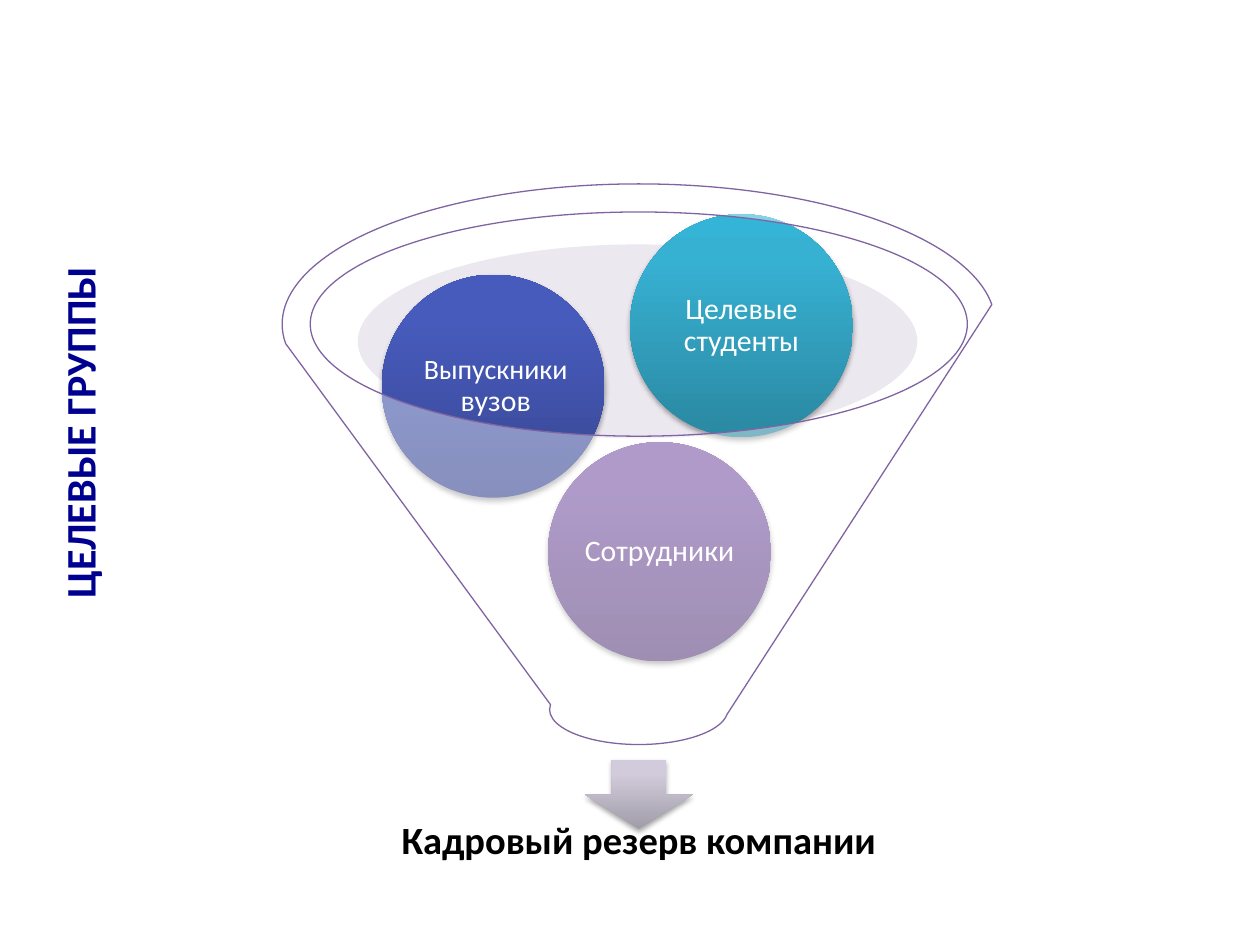
"""Build a funnel slide that leads three target groups to one talent pool."""
from pptx import Presentation
from pptx.dml.color import RGBColor
from pptx.enum.shapes import MSO_SHAPE
from pptx.enum.text import MSO_ANCHOR, MSO_AUTO_SIZE, PP_ALIGN
from pptx.oxml import parse_xml
from pptx.oxml.ns import nsdecls
from pptx.util import Inches, Pt

THEME = {
    "font": "Calibri",
    "mist": "CDC6D7", "veil": "FFFFFF", "rim": "8064A2", "shade": "000000",
    "arrow": ("A19CA8", "D1CBDB", "D2CBDC"),
    "staff": ("5F4480", "7B58A6", "7C57A8"),
    "grads": ("374691", "475BBC", "455ABF"),
    "target": ("2A88A2", "37B1D2", "34B4D6"),
    "ball ink": "FFFFFF", "pool ink": "000000", "title ink": "000090",
    "ball size": 17, "small size": 16, "pool size": 22, "title size": 24,
}
NS = nsdecls("a")

deck = Presentation()
deck.slide_width, deck.slide_height = Inches(10), Inches(7.5)
slide = deck.slides.add_slide(deck.slide_layouts[6])
shapes = slide.shapes


def draw(kind, at, tone):
    """Add a shape at shares of the slide, with a shadowed gradient or a clear tint."""
    shape = shapes.add_shape(kind, *at)
    props = shape._element.spPr
    rich = isinstance(tone, tuple)
    if rich:
        stops = "".join(f'<a:gs pos="{pos}000"><a:srgbClr val="{hue}"/></a:gs>'
                        for pos, hue in zip((0, 80, 100), tone))
        fill = (f'<a:gradFill {NS} rotWithShape="1"><a:gsLst>{stops}</a:gsLst>'
                '<a:lin ang="16200000" scaled="0"/></a:gradFill>')
    else:
        fill = (f'<a:solidFill {NS}><a:srgbClr val="{tone}">'
                '<a:alpha val="40000"/></a:srgbClr></a:solidFill>')
    props.append(parse_xml(fill))
    shape.line.fill.background()
    shape.shadow.inherit = False
    if rich:
        props[-1].append(parse_xml(
            f'<a:outerShdw {NS} blurRad="{Pt(3.1)}" dist="{Pt(1.8)}" dir="5400000" '
            f'rotWithShape="0"><a:srgbClr val="{THEME["shade"]}">'
            '<a:alpha val="35000"/></a:srgbClr></a:outerShdw>'))
    return shape


def write(shape, runs, ink, pads, look, bold=False):
    """Fill a shape with one paragraph of sized runs."""
    frame = shape.text_frame
    sides = ("margin_left", "margin_top", "margin_right", "margin_bottom")
    form = {"word_wrap": True, "vertical_anchor": MSO_ANCHOR.MIDDLE,
            **dict(zip(sides, map(Inches, pads)))}
    for key, value in form.items():
        setattr(frame, key, value)
    para = frame.paragraphs[0]
    for key, value in look.items():
        setattr(para, key, value)
    for text, size in runs:
        run = para.add_run()
        run.text = text
        face = {"name": THEME["font"], "size": Pt(THEME[size]), "bold": bold}
        for key, value in face.items():
            setattr(run.font, key, value)
        run.font.color.rgb = RGBColor.from_string(THEME[ink])


spots = {
    "mist": (28.4, 25.87, 44.4, 20.53),
    "arrow": (46.4, 80.4, 8.6, 7.33),
    "pool": (22.3, 85.07, 56.8, 8.13),
    "staff": (43.5, 46.8, 17.7, 23.2),
    "grads": (30.3, 29.07, 17.7, 23.6),
    "target": (50, 22.67, 17.7, 23.6),
    "funnel": (22.4, 19.47, 56.6, 59.33),
    "title": (-8.7, 41.33, 29.9, 6.67),
}
sides = (deck.slide_width, deck.slide_height) * 2
spots = {name: [int(side * part / 100) for side, part in zip(sides, spot)]
         for name, spot in spots.items()}
mid = {"alignment": PP_ALIGN.CENTER, "line_spacing": 0.9}

draw(MSO_SHAPE.OVAL, spots["mist"], THEME["mist"])
draw(MSO_SHAPE.DOWN_ARROW, spots["arrow"], THEME["arrow"])
pool = shapes.add_textbox(*spots["pool"])
write(pool, [("Кадровый резерв компании", "pool size")], "pool ink",
      (0.17,) * 4, mid, True)

balls = [
    ("staff", [("Сотрудники", "ball size")], (0.02,) * 4),
    ("grads", [("Выпускники", "small size"), (" вузов", "ball size")],
     (0.04, 0.02, 0, 0.02)),
    ("target", [("Целевые студенты", "ball size")], (0.02,) * 4),
]
for name, runs, pads in balls:
    ball = draw(MSO_SHAPE.OVAL, spots[name], THEME[name])
    write(ball, runs, "ball ink", pads, mid)

funnel = draw(MSO_SHAPE.FUNNEL, spots["funnel"], THEME["veil"])
funnel.line.color.rgb = RGBColor.from_string(THEME["rim"])
funnel.line.width = Pt(0.75)

title = shapes.add_textbox(*spots["title"])
title.rotation = 270
write(title, [("ЦЕЛЕВЫЕ ГРУППЫ", "title size")], "title ink",
      (0.1, 0.05, 0.1, 0.05), {"alignment": PP_ALIGN.LEFT}, True)
title.text_frame.auto_size = MSO_AUTO_SIZE.SHAPE_TO_FIT_TEXT

deck.save("out.pptx")
